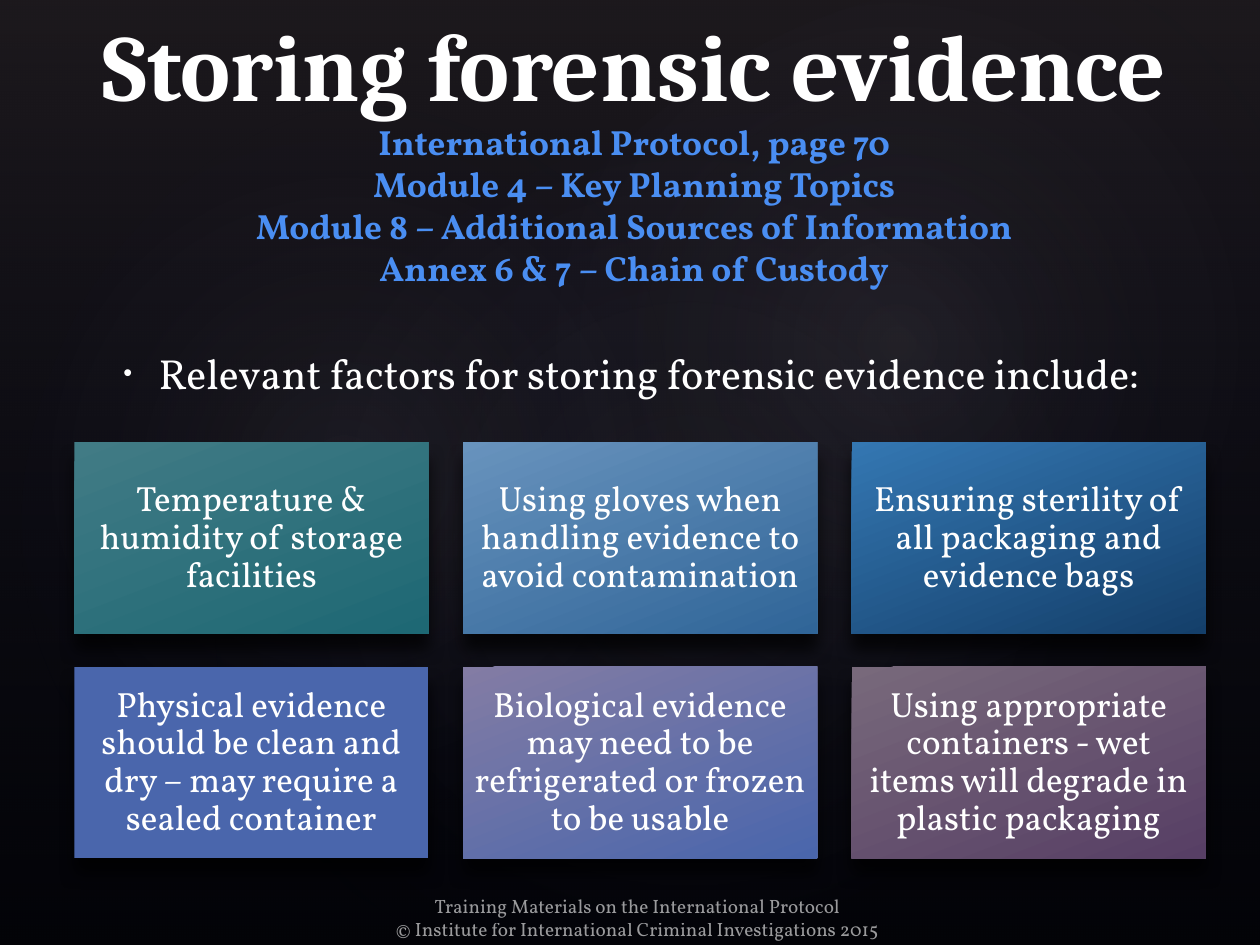
import pptx
import pptx.util
import pptx.oxml
import pptx.oxml.ns
import pptx.dml.color
import pptx.enum.shapes
import pptx.enum.text

Inches, Pt = pptx.util.Inches, pptx.util.Pt
Shape = pptx.enum.shapes.MSO_SHAPE
Anchor = pptx.enum.text.MSO_ANCHOR
Align = pptx.enum.text.PP_ALIGN
qn = pptx.oxml.ns.qn

HUES = {"back": "000000", "text": "FFFFFF", "link": "4A8EF2",
        "veil": "504652", "navy": "242852", "glow": "C4BCC6"}
BODY, HEAD = "Vollkorn", "Cambria"


def tint(hue, alpha=100):
    return f'<a:srgbClr val="{hue}"><a:alpha val="{alpha * 1000}"/></a:srgbClr>'


def node(tag, inner, attrs=""):
    space = pptx.oxml.ns.nsdecls("a")
    return pptx.oxml.parse_xml(f"<a:{tag} {space} {attrs}>{inner}</a:{tag}>")


class Deck:
    def __init__(self):
        self.prs = pptx.Presentation()
        self.prs.slide_width, self.prs.slide_height = Inches(10), Inches(7.5)
        self.slide = self.prs.slides.add_slide(self.prs.slide_layouts[5])
        fill = self.slide.background.fill
        fill.solid()
        fill.fore_color.rgb = pptx.dml.color.RGBColor.from_string(HUES["back"])

    def run(self, para, text, size, hue="text", font=BODY, bold=False, alpha=100):
        run = para.add_run()
        run.text = text
        run.font.size, run.font.name, run.font.bold = Pt(size), font, bold
        run.font.color.rgb = pptx.dml.color.RGBColor.from_string(HUES[hue])
        if alpha < 100:
            clr = run.font.fill._xPr.find(qn("a:solidFill"))[0]
            clr.append(node("alpha", "", f'val="{alpha * 1000}"'))

    def frame(self, shape, anchor, side=0.1, edge=0.05):
        frame = shape.text_frame
        frame.word_wrap = True
        frame.auto_size = pptx.enum.text.MSO_AUTO_SIZE.NONE
        frame.vertical_anchor = anchor
        frame.margin_left = frame.margin_right = Inches(side)
        frame.margin_top = frame.margin_bottom = Inches(edge)
        frame.paragraphs[0].alignment = Align.CENTER
        return frame

    def box(self, area, anchor):
        shape = self.slide.shapes.add_textbox(*map(Inches, area))
        return self.frame(shape, anchor)

    def shade(self, kind, area, stops, way, turn=0):
        """Add a preset shape filled with a gradient of (place, hue, alpha)."""
        shape = self.slide.shapes.add_shape(kind, *map(Inches, area))
        shape.rotation = turn
        shape.line.fill.background()
        shape.shadow.inherit = False
        shape.fill.solid()
        steps = "".join(f'<a:gs pos="{place * 1000}">{tint(hue, alpha)}</a:gs>'
                        for place, hue, alpha in stops)
        props = shape._element.spPr
        props.replace(props.find(qn("a:solidFill")),
                      node("gradFill", f"<a:gsLst>{steps}</a:gsLst>{way}"))
        return shape

    def slope(self, angle):
        return f'<a:lin ang="{angle * 60000}" scaled="0"/>'

    def glow(self, area, turn, alpha):
        way = ('<a:path path="circle"><a:fillToRect l="50000" t="50000" '
               'r="50000" b="50000"/></a:path>')
        stops = [(0, HUES["glow"], alpha), (58, HUES["navy"], 0)]
        self.shade(Shape.OVAL, area, stops, way, turn)

    def card(self, area, first, last, text):
        stops = [(0, first, 100), (100, last, 100)]
        shape = self.shade(Shape.RECTANGLE, area, stops, self.slope(69))
        shape._element.spPr.find(qn("a:effectLst")).append(node(
            "outerShdw", tint(HUES["back"], 70),
            f'blurRad="{Pt(9)}" dist="{Pt(9)}" dir="5400000" rotWithShape="0"'))
        para = self.frame(shape, Anchor.MIDDLE, 0.09, 0.09).paragraphs[0]
        para.line_spacing, para.space_after = 0.9, Pt(7)
        self.run(para, text, 20)

    def bullet(self, area, text):
        para = self.box(area, Anchor.MIDDLE).paragraphs[0]
        para.space_before = Pt(4.8)
        props = para._p.get_or_add_pPr()
        props.set("marL", str(Inches(0.3)))
        props.set("indent", str(Inches(-0.28)))
        props.append(node("buClr", tint(HUES["text"])))
        props.append(node("buSzPct", "", 'val="60000"'))
        props.append(node("buFont", "", 'typeface="Arial"'))
        props.append(node("buChar", "", 'char="•"'))
        self.run(para, text, 24)

    def title(self, area, text, notes):
        shape = self.slide.shapes.title
        shape.left, shape.top, shape.width, shape.height = map(Inches, area)
        para = self.frame(shape, Anchor.BOTTOM).paragraphs[0]
        self.run(para, text, 54, font=HEAD, bold=True)
        for note in notes:
            para.add_line_break()
            self.run(para, note, 20, "link", bold=True)

    def footer(self, area, lines):
        frame = self.box(area, Anchor.TOP)
        for i, line in enumerate(lines):
            para = frame.add_paragraph() if i else frame.paragraphs[0]
            para.alignment = Align.CENTER
            self.run(para, line, 11, alpha=60)


CARDS = [
    ("417B85", "1E6874", "Temperature & humidity of storage facilities"),
    ("6893BD", "306598", "Using gloves when handling evidence to avoid contamination"),
    ("3477B2", "143F6A", "Ensuring sterility of all packaging and evidence bags"),
    ("4A66AC", "4A66AC",
     "Physical evidence should be clean and dry – may require a sealed container"),
    ("837CA4", "4A66AC",
     "Biological evidence may need to be refrigerated or frozen to be usable"),
    ("78697B", "573F65",
     "Using appropriate containers - wet items will degrade in plastic packaging"),
]


def main():
    deck = Deck()

    # Backdrop: dark veil and three soft glows
    deck.shade(Shape.RECTANGLE, (0, 0, 10, 7.5),
               [(0, HUES["veil"], 36), (100, HUES["navy"], 10)], deck.slope(90))
    deck.glow((1.5, 1.14, 7.92, 6.24), 328.7, 7)
    deck.glow((-0.3, 1.28, 6.06, 4.9), 294.3, 8)
    deck.glow((3.58, 0.13, 7.09, 5.2), 328.7, 8)

    # Lead line and footer
    deck.bullet((0.59, 2.41, 8.82, 1.1),
                "Relevant factors for storing forensic evidence include:")
    deck.footer((2.56, 7.05, 5, 0.4), [
        "Training Materials on the International Protocol",
        "© Institute for International Criminal Investigations 2015"])

    # Factor cards, three to a row
    for i, (first, last, text) in enumerate(CARDS):
        row, col = divmod(i, 3)
        area = (0.59 + col * 3.085, 3.51 + row * 1.78, 2.81, 1.52)
        deck.card(area, first, last, text)

    # Title with its references, in front of the backdrop
    deck.title((0.35, 0.16, 9.37, 2.18), "Storing forensic evidence", [
        "International Protocol, page 70",
        "Module 4 – Key Planning Topics",
        "Module 8 – Additional Sources of Information",
        "Annex 6 & 7 – Chain of Custody"])
    tree = deck.slide.shapes._spTree
    tree.append(deck.slide.shapes.title._element)

    deck.prs.save("out.pptx")


if __name__ == "__main__":
    main()
